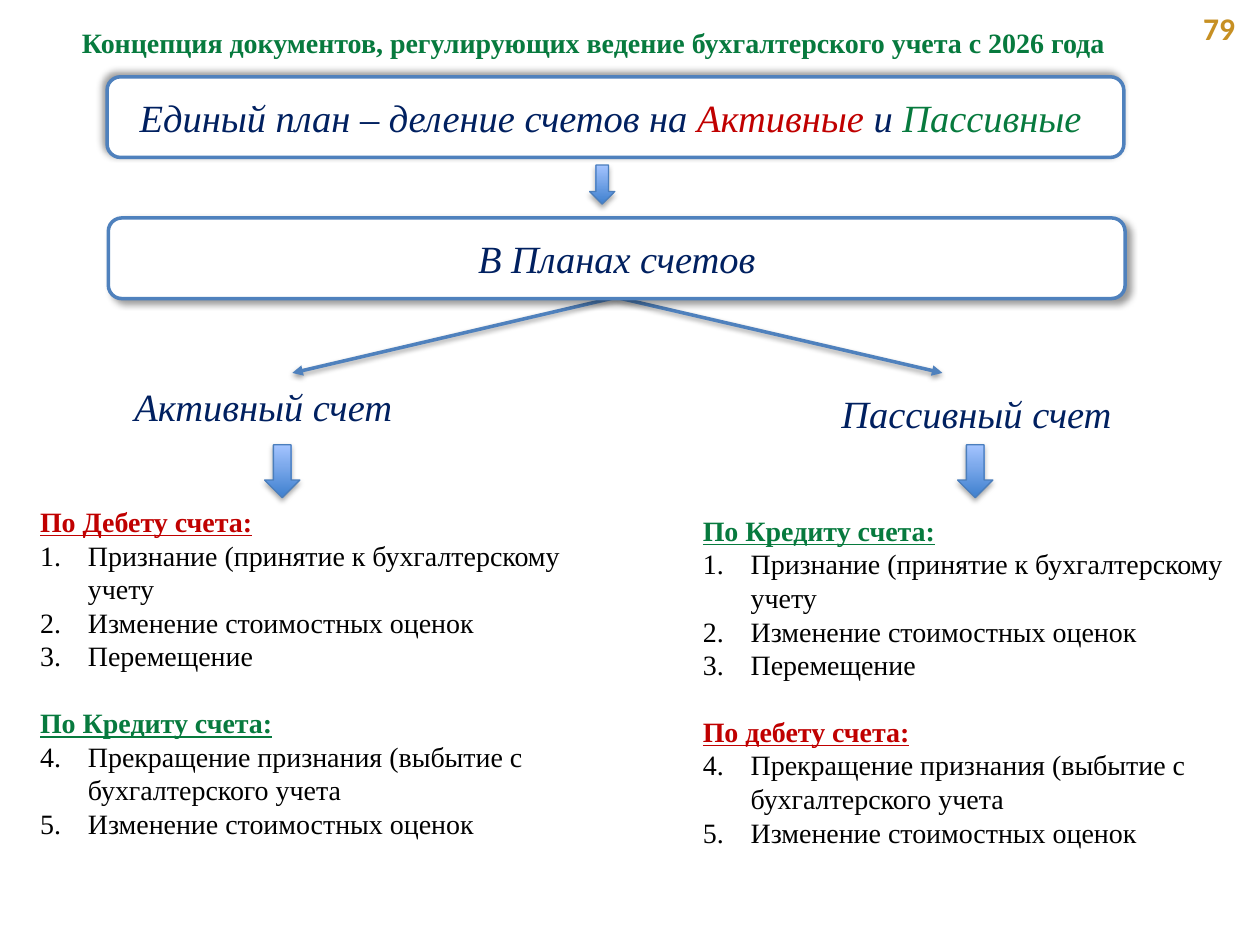
from lxml import etree
from pptx import Presentation
from pptx.dml.color import RGBColor
from pptx.enum.shapes import MSO_CONNECTOR, MSO_SHAPE
from pptx.enum.text import MSO_ANCHOR as Anchor, PP_ALIGN as Align
from pptx.oxml.ns import qn
from pptx.util import Inches, Pt

NAVY, RED, GREEN, BLACK = "002060", "C00000", "077A3E", "000000"
GOLD, BLUE, ARROW_EDGE, WHITE = "C79023", "4F81BD", "4B7EBC", "FFFFFF"
SERIF = "Times New Roman"


def rgb(value):
    return RGBColor.from_string(value)


def add_node(parent, tag, **attributes):
    node = etree.SubElement(parent, qn(tag))
    for name, value in attributes.items():
        node.set(name, str(value))
    return node


class SlideBuilder:
    def __init__(self, slide, font=SERIF):
        self.slide = slide
        self.font = font

    def shadow(self, shape, opacity, blur, distance, angle):
        effects = add_node(shape._element.spPr, "a:effectLst")
        outer = add_node(effects, "a:outerShdw", blurRad=Pt(blur), dist=Pt(distance),
                         dir=angle * 60000, algn="ctr", rotWithShape=0)
        color = add_node(outer, "a:srgbClr", val=BLACK)
        add_node(color, "a:alpha", val=opacity * 1000)

    def run(self, paragraph, text, color, size, font=None, **style):
        run = paragraph.add_run()
        run.text = text
        run.font.name = font or self.font
        run.font.size = Pt(size)
        run.font.color.rgb = rgb(color)
        for name, value in style.items():
            setattr(run.font, name, value)

    def text_box(self, box, anchor=Anchor.TOP):
        frame = self.slide.shapes.add_textbox(*map(Inches, box)).text_frame
        frame.word_wrap = True
        frame.vertical_anchor = anchor
        return frame

    def label(self, box, text, color, size, anchor=Anchor.TOP, align=Align.CENTER, **style):
        paragraph = self.text_box(box, anchor).paragraphs[0]
        paragraph.alignment = align
        self.run(paragraph, text, color, size, **style)

    def panel(self, box, runs, shadow_angle):
        shape = self.slide.shapes.add_shape(MSO_SHAPE.ROUNDED_RECTANGLE, *map(Inches, box))
        shape.fill.solid()
        shape.fill.fore_color.rgb = rgb(WHITE)
        shape.line.color.rgb = rgb(BLUE)
        shape.line.width = Pt(2)
        self.shadow(shape, 40, 4, 3, shadow_angle)
        frame = shape.text_frame
        frame.word_wrap = True
        frame.vertical_anchor = Anchor.MIDDLE
        paragraph = frame.paragraphs[0]
        paragraph.alignment = Align.CENTER
        for text, color in runs:
            self.run(paragraph, text, color, 22, italic=True)

    def down_arrow(self, *box):
        shape = self.slide.shapes.add_shape(MSO_SHAPE.DOWN_ARROW, *map(Inches, box))
        shape.fill.gradient()
        shape.fill.gradient_angle = 90
        for stop, color in zip(shape.fill.gradient_stops, ("3F80CE", "A4C4FF")):
            stop.color.rgb = rgb(color)
        shape.line.color.rgb = rgb(ARROW_EDGE)
        shape.line.width = Pt(0.75)
        self.shadow(shape, 35, 3.1, 1.8, 90)

    def branch(self, start, end):
        line = self.slide.shapes.add_connector(
            MSO_CONNECTOR.STRAIGHT, *map(Inches, start + end))
        line.line.color.rgb = rgb(BLUE)
        line.line.width = Pt(2)
        add_node(line.line._get_or_add_ln(), "a:tailEnd", type="triangle")
        self.shadow(line, 38, 3.1, 1.6, 90)

    def numbered_lists(self, box, sections):
        frame = self.text_box(box, Anchor.MIDDLE)
        paragraph = frame.paragraphs[0]
        number = 1
        for heading, color, items in sections:
            if number > 1:
                paragraph = frame.add_paragraph()
                paragraph.space_before = Pt(19)
            self.run(paragraph, heading, color, 16, bold=True, underline=True)
            for item in items:
                paragraph = frame.add_paragraph()
                properties = paragraph._p.get_or_add_pPr()
                properties.set("marL", str(Inches(0.38)))
                properties.set("indent", str(-Inches(0.38)))
                add_node(properties, "a:buFont", typeface="+mj-lt")
                add_node(properties, "a:buAutoNum", type="arabicPeriod", startAt=number)
                self.run(paragraph, item, BLACK, 16)
            number += len(items)


def main():
    presentation = Presentation()
    presentation.slide_width, presentation.slide_height = Inches(10), Inches(7.5)
    slide = presentation.slides.add_slide(presentation.slide_layouts[6])
    builder = SlideBuilder(slide)

    # Page number and title
    builder.label((9.45, 0.02, 0.49, 0.4), "79", GOLD, 18, align=Align.LEFT,
                  font="Calibri", bold=True)
    builder.label((0.28, 0.15, 8.86, 0.44),
                  "Концепция документов, регулирующих ведение бухгалтерского учета с 2026 года",
                  GREEN, 16, bold=True)

    # Branches go behind the second panel
    for end in ((2.32, 2.96), (7.48, 2.96)):
        builder.branch((4.89, 2.36), end)

    # Panels
    builder.panel((0.85, 0.61, 8.07, 0.64),
                  [("Единый план – деление счетов на ", NAVY), ("Активные", RED),
                   (" и ", NAVY), ("Пассивные ", GREEN)], 225)
    builder.panel((0.86, 1.73, 8.07, 0.64), [("В Планах счетов", NAVY)], 45)
    builder.down_arrow(4.68, 1.31, 0.2, 0.31)

    # Account columns
    recognition = ["Признание (принятие к бухгалтерскому учету",
                   "Изменение стоимостных оценок", "Перемещение"]
    disposal = ["Прекращение признания (выбытие с бухгалтерского учета",
                "Изменение стоимостных оценок"]
    columns = [
        ("Активный счет", (0.83, 2.9, 2.52, 0.65), 2.1, (0.22, 3.85, 4.66, 2.97),
         ("По Дебету счета:", RED), ("По Кредиту счета:", GREEN)),
        ("Пассивный счет", (6.38, 2.94, 2.74, 0.68), 7.6, (5.48, 3.92, 4.33, 2.97),
         ("По Кредиту счета:", GREEN), ("По дебету счета:", RED)),
    ]
    for name, name_box, arrow_left, list_box, first, second in columns:
        builder.label(name_box, name, NAVY, 22, Anchor.MIDDLE, italic=True)
        builder.down_arrow(arrow_left, 3.53, 0.28, 0.42)
        builder.numbered_lists(list_box, [(*first, recognition), (*second, disposal)])

    presentation.save("out.pptx")


if __name__ == "__main__":
    main()
